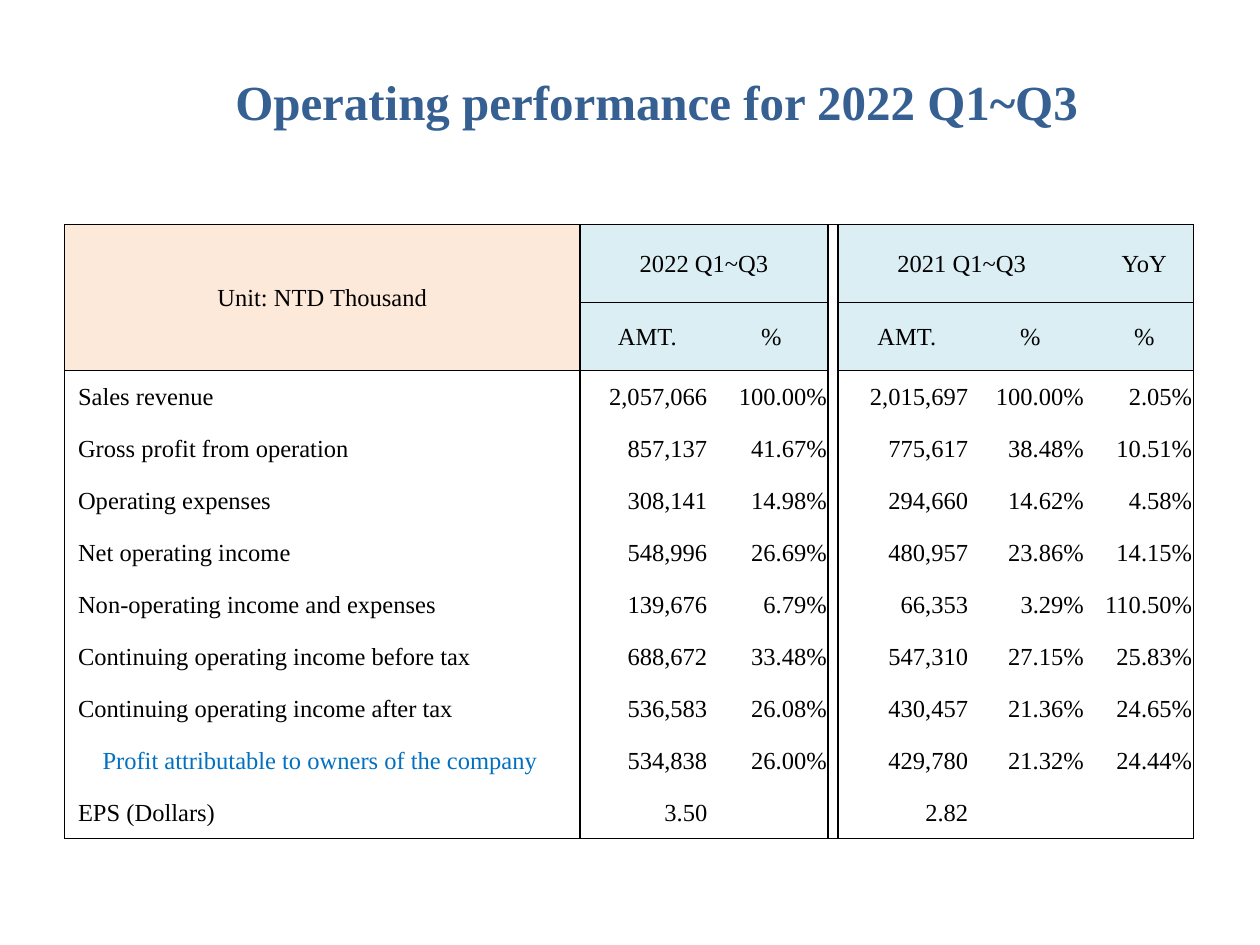
from typing import NamedTuple

from lxml import etree
from pptx import Presentation
from pptx.dml.color import RGBColor
from pptx.enum import text
from pptx.oxml import ns
from pptx.util import Pt

COLORS = {"title": "376092", "ink": "000000", "owners": "0070C0",
          "unit": "FDE9D9", "header": "DBEEF3"}
FONT = "Times New Roman"
COL_WIDTHS = [294.5, 77, 64.8, 5.8, 78.5, 62.6, 5.8, 56.1]
ROW_HEIGHTS = [44.6, 38.9] + [29.72] * 9
GAP_COL = 3
HEADERS = [
    ["Unit: NTD Thousand", "2022 Q1~Q3", "", "", "2021 Q1~Q3", "", "", "YoY"],
    ["", "AMT.", "%", "", "AMT.", "%", "", "%"],
]
MERGES = [((0, 0), (1, 0)), ((0, 1), (0, 2)), ((0, 4), (0, 5))]


class Item(NamedTuple):
    label: str
    amt_2022: str
    pct_2022: str
    amt_2021: str
    pct_2021: str
    yoy: str
    indent: float = 7.7
    color: str = "ink"


ITEMS = [
    Item("Sales revenue", "2,057,066", "100.00%", "2,015,697", "100.00%", "2.05%"),
    Item("Gross profit from operation", "857,137", "41.67%", "775,617", "38.48%", "10.51%"),
    Item("Operating expenses", "308,141", "14.98%", "294,660", "14.62%", "4.58%"),
    Item("Net operating income", "548,996", "26.69%", "480,957", "23.86%", "14.15%"),
    Item("Non-operating income and expenses", "139,676", "6.79%", "66,353", "3.29%", "110.50%"),
    Item("Continuing operating income before tax", "688,672", "33.48%", "547,310", "27.15%", "25.83%"),
    Item("Continuing operating income after tax", "536,583", "26.08%", "430,457", "21.36%", "24.65%"),
    Item("Profit attributable to owners of the company", "534,838", "26.00%", "429,780", "21.32%",
         "24.44%", 21.7, "owners"),
    Item("EPS (Dollars)", "3.50", "", "2.82", "", ""),
]


def set_font(font, size: float, color: str, bold: bool = False) -> None:
    """Apply the shared typeface with the given size, colour and weight."""
    for name, value in {"name": FONT, "size": Pt(size), "bold": bold}.items():
        setattr(font, name, value)
    font.color.rgb = RGBColor.from_string(COLORS[color])


def set_borders(cell, row: int, col: int) -> None:
    """Rule the cell edges that belong to the outline, the headers and the gap."""
    last = len(ROW_HEIGHTS) - 1
    sides = {
        "L": col in (0, 1, 3, 4),
        "R": col in (0, 2, 3, 7) or (row, col) == (0, 1),
        "T": row == 0 or (row <= 2 and col != GAP_COL),
        "B": row == last or (row <= 1 and col != GAP_COL),
    }
    tc_pr = cell._tc.get_or_add_tcPr()
    for side, ruled in sides.items():
        ln = etree.SubElement(tc_pr, ns.qn(f"a:ln{side}"), w=str(Pt(1)))
        if ruled:
            fill = etree.SubElement(ln, ns.qn("a:solidFill"))
            etree.SubElement(fill, ns.qn("a:srgbClr"), val=COLORS["ink"])
        else:
            etree.SubElement(ln, ns.qn("a:noFill"))


def fill_cell(cell, words: str, align, color: str = "ink", fill: str = "",
              left: float = 0.7, right: float = 0.7) -> None:
    """Write one cell with its margins, alignment and background."""
    margins = {"margin_left": Pt(left), "margin_right": Pt(right),
               "margin_top": Pt(0.7), "margin_bottom": Pt(0),
               "vertical_anchor": text.MSO_ANCHOR.MIDDLE}
    for name, value in margins.items():
        setattr(cell, name, value)
    if fill:
        cell.fill.solid()
        cell.fill.fore_color.rgb = RGBColor.from_string(COLORS[fill])
    else:
        cell.fill.background()
    p = cell.text_frame.paragraphs[0]
    p.alignment = align
    if words:
        r = p.add_run()
        r.text = words
        set_font(r.font, 14, color)
    else:
        set_font(p.font, 14, color)


def add_title(s, words: str) -> None:
    """Add the slide heading."""
    tf = s.shapes.add_textbox(Pt(127.4), Pt(37.4), Pt(501), Pt(41)).text_frame
    tf.word_wrap = False
    tf.auto_size = text.MSO_AUTO_SIZE.SHAPE_TO_FIT_TEXT
    r = tf.paragraphs[0].add_run()
    r.text = words
    set_font(r.font, 28, "title", bold=True)


def add_results(s, items: list[Item]) -> None:
    """Add the table of operating results."""
    table = s.shapes.add_table(len(ROW_HEIGHTS), len(COL_WIDTHS), Pt(36.9), Pt(128.3),
                               Pt(sum(COL_WIDTHS)), Pt(sum(ROW_HEIGHTS))).table
    table.first_row = table.horz_banding = False
    for column, width in zip(table.columns, COL_WIDTHS):
        column.width = Pt(width)
    for row, height in zip(table.rows, ROW_HEIGHTS):
        row.height = Pt(height)
    for i in range(len(ROW_HEIGHTS)):
        for j in range(len(COL_WIDTHS)):
            set_borders(table.cell(i, j), i, j)
    for i, header in enumerate(HEADERS):
        for j, words in enumerate(header):
            fill = {0: "unit", GAP_COL: ""}.get(j, "header")
            fill_cell(table.cell(i, j), words, text.PP_ALIGN.CENTER, fill=fill)
    for i, item in enumerate(items, len(HEADERS)):
        fill_cell(table.cell(i, 0), item.label, text.PP_ALIGN.LEFT, item.color, left=item.indent)
        values = ["", item.amt_2022, item.pct_2022, "", item.amt_2021, item.pct_2021, "", item.yoy]
        for j, words in enumerate(values[1:], 1):
            fill_cell(table.cell(i, j), words, text.PP_ALIGN.RIGHT,
                      right=4.2 if j in (1, 4) else 0.7)
    for first, last in MERGES:
        table.cell(*first).merge(table.cell(*last))


def main() -> None:
    """Build and save the slide."""
    prs = Presentation()
    prs.slide_width, prs.slide_height = Pt(720), Pt(540)
    s = prs.slides.add_slide(prs.slide_layouts[6])
    add_title(s, "Operating performance for 2022 Q1~Q3")
    add_results(s, ITEMS)
    prs.save("out.pptx")


if __name__ == "__main__":
    main()
